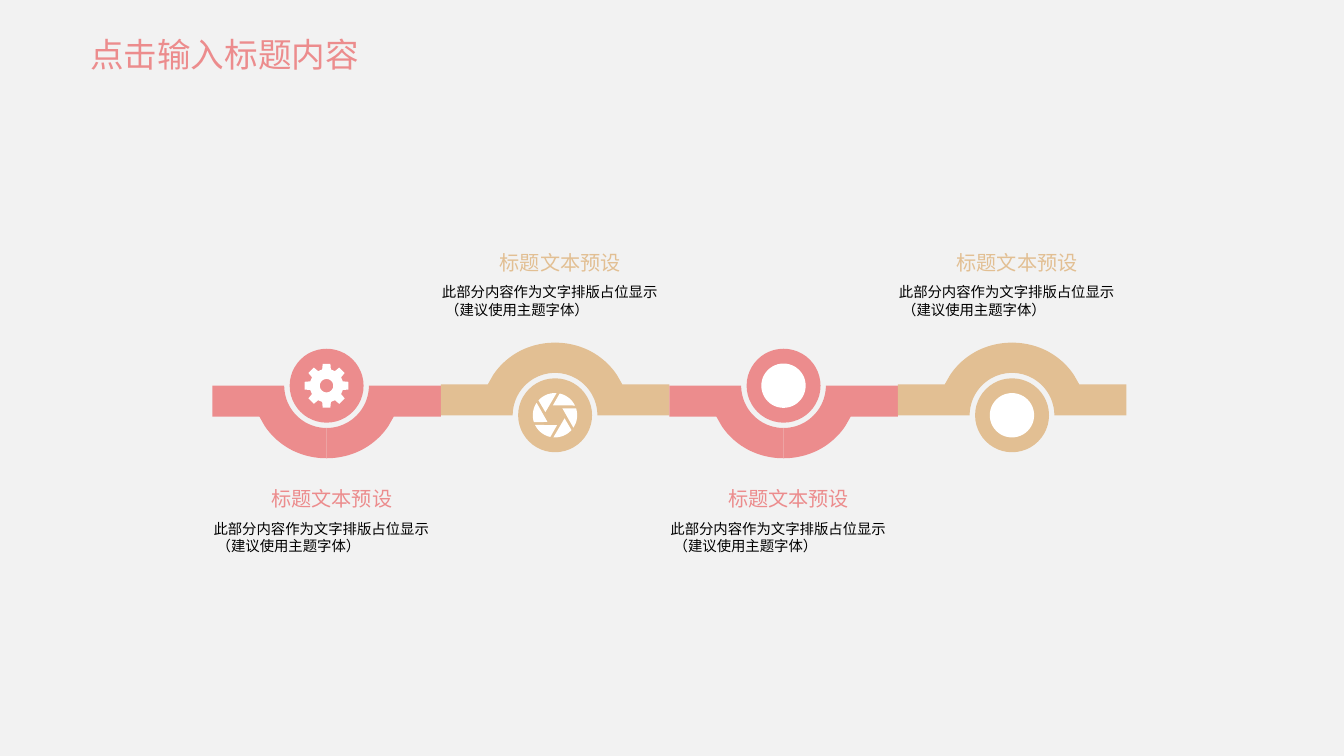
from copy import deepcopy
from math import cos, radians, sin

from lxml.etree import SubElement
from pptx import Presentation
from pptx.dml.color import RGBColor
from pptx.enum.shapes import MSO_SHAPE
from pptx.enum.text import MSO_ANCHOR
from pptx.oxml.ns import qn
from pptx.util import Inches, Pt

ROSE = RGBColor(0xEC, 0x8C, 0x8D)
SAND = RGBColor(0xE2, 0xBF, 0x93)
WHITE = RGBColor(0xFF, 0xFF, 0xFF)
BLACK = RGBColor(0, 0, 0)
PAPER = RGBColor(0xF2, 0xF2, 0xF2)

STAGE_WIDTH = 1.7
ICON_RADIUS = 0.165
HEADING = "标题文本预设"
BODY = ["此部分内容作为文字排版占位显示", " （建议使用主题字体）"]
STAGES = [("gear", ROSE), ("aperture", SAND), ("disc", ROSE), ("disc", SAND)]


def paint(shape, color):
    """Give a shape a flat fill with no line or shadow."""
    shape.shadow.inherit = False
    shape.fill.solid()
    shape.fill.fore_color.rgb = color
    shape.line.fill.background()


def polar(radius, angle):
    """Return the point at an angle in degrees, y pointing down."""
    return radius * cos(radians(angle)), radius * sin(radians(angle))


def arc(radius, start, end, steps=24):
    """Return points along a circular arc."""
    return [polar(radius, start + (end - start) * i / steps) for i in range(steps + 1)]


def bezier(a, b, c, d, steps=24):
    """Return points along a cubic curve."""
    points = []
    for i in range(steps + 1):
        t = i / steps
        weights = ((1 - t) ** 3, 3 * t * (1 - t) ** 2, 3 * t * t * (1 - t), t ** 3)
        points.append(tuple(sum(w * p[k] for w, p in zip(weights, (a, b, c, d))) for k in (0, 1)))
    return points


def add_outline(page, center, contours, color):
    """Draw closed contours, given in inches around a center, as one shape."""
    placed = [[(Inches(center[0] + x), Inches(center[1] + y)) for x, y in contour]
              for contour in contours]
    builder = page.shapes.build_freeform(*placed[0][0])
    for index, contour in enumerate(placed):
        if index:
            builder.move_to(*contour[0])
        builder.add_line_segments(contour[1:], close=True)
    paint(builder.convert_to_shape(), color)


def add_disc(page, center, radius, color):
    """Draw a filled circle around a center."""
    corner = [Inches(value - radius) for value in center]
    disc = page.shapes.add_shape(MSO_SHAPE.OVAL, *corner, Inches(2 * radius), Inches(2 * radius))
    paint(disc, color)


def add_text(page, bounds, lines, size, color, face="Calibri", **frame_format):
    """Write lines of one paragraph into a text box."""
    box = page.shapes.add_textbox(*(Inches(value) for value in bounds))
    frame = box.text_frame
    for name, value in frame_format.items():
        setattr(frame, name, value)
    para = frame.paragraphs[0]
    for index, line in enumerate(lines):
        if index:
            para.add_line_break()
        span = para.add_run()
        span.text = line
        for name, value in {"size": Pt(size), "name": face}.items():
            setattr(span.font, name, value)
        span.font.color.rgb = color
        SubElement(span._r.rPr, qn("a:ea"), typeface=face)
    for line_break in para._p.findall(qn("a:br")):
        line_break.append(deepcopy(para.runs[0]._r.rPr))


def add_band(page, center, direction, color):
    """Draw the two mirrored halves of a band that bows around a center."""
    half = [(0.85, 0), *arc(0.315, 0, 90),
            *bezier((0, 0.54), (0.19, 0.54), (0.36, 0.45), (0.46, 0.3)),
            (0.5, 0.23), (0.85, 0.23)]
    for side in (1, -1):
        add_outline(page, center, [[(side * x, direction * y) for x, y in half]], color)


def add_gear(page, center):
    """Draw an eight-toothed gear with a hole."""
    teeth = [polar(radius, 45 * tooth + turn) for tooth in range(8)
             for radius, turn in ((0.125, -15), (ICON_RADIUS, -10), (ICON_RADIUS, 10), (0.125, 15))]
    add_outline(page, center, [teeth, arc(0.05, 360, 0)], WHITE)


def add_aperture(page, center):
    """Draw six shutter blades."""
    blades = [[*arc(ICON_RADIUS, 162 + turn, 214 + turn), polar(0.075, 138 + turn)]
              for turn in range(0, 360, 60)]
    add_outline(page, center, blades, WHITE)


def add_plain_disc(page, center):
    """Draw a plain round icon."""
    add_disc(page, center, ICON_RADIUS, WHITE)


def add_stage(page, left, icon, color):
    """Draw one stage of the chain with its icon and caption."""
    below = color == ROSE
    axis, caption_top, direction = (2.87, 3.57, 1) if below else (3.09, 1.81, -1)
    middle = left + STAGE_WIDTH / 2
    center = (middle, axis)
    add_band(page, center, direction, color)
    add_disc(page, center, 0.275, color)
    {"gear": add_gear, "aperture": add_aperture, "disc": add_plain_disc}[icon](page, center)
    add_text(page, (middle - 0.51, caption_top, 1.03, 0.25), [HEADING], 10.8, color,
             word_wrap=False, margin_right=0)
    add_text(page, (middle - 0.94, caption_top + 0.25, 1.88, 0.46), BODY, 7.75, BLACK,
             word_wrap=True)


def main():
    """Build and save the slide."""
    deck = Presentation()
    deck.slide_width, deck.slide_height = Inches(10), Inches(5.625)
    page = deck.slides.add_slide(deck.slide_layouts[6])
    page.background.fill.solid()
    page.background.fill.fore_color.rgb = PAPER
    for index, (icon, color) in enumerate(STAGES):
        add_stage(page, 1.58 + index * STAGE_WIDTH, icon, color)
    add_text(page, (0.67, 0.19, 2.33, 0.42), ["点击输入标题内容"], 18, ROSE, "Noto Sans CJK SC",
             word_wrap=True, vertical_anchor=MSO_ANCHOR.MIDDLE, margin_left=0, margin_right=0)
    deck.save("out.pptx")


if __name__ == "__main__":
    main()
